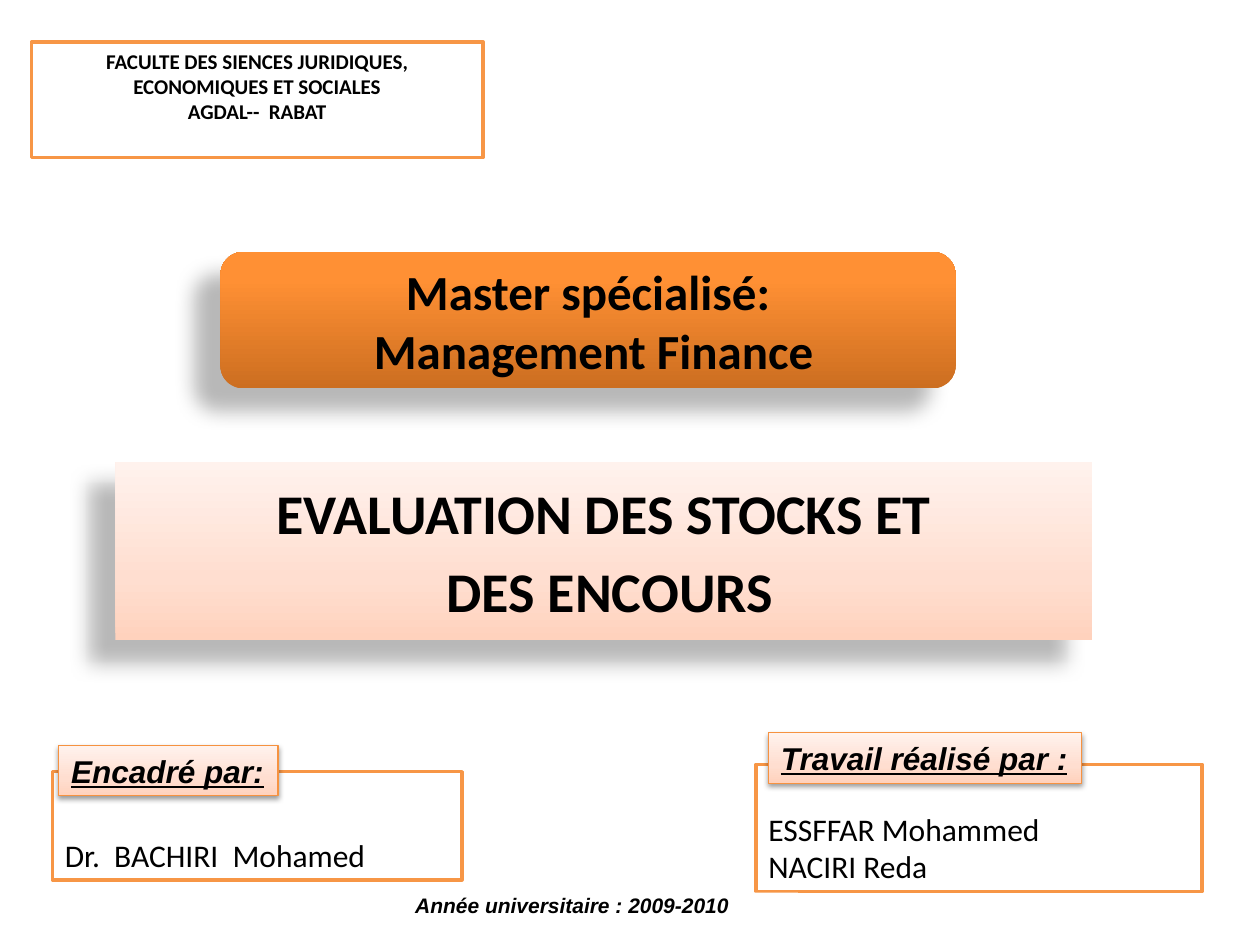
import dataclasses
import typing

import lxml.etree
import pptx
import pptx.dml.color
import pptx.enum.shapes
import pptx.enum.text
import pptx.oxml
import pptx.oxml.ns
import pptx.util

COLS, ROWS = 120, 90
ALIGN = pptx.enum.text.PP_ALIGN
ANCHOR = pptx.enum.text.MSO_ANCHOR
SHAPE = pptx.enum.shapes.MSO_SHAPE

WHITE, BLACK, ORANGE = "FFFFFF", "000000", "F79646"
PEACH = ((0, "FFD2BD"), (35, "FFDED0"), (100, "FFF2ED"))
AMBER = ((0, "CC6E20"), (80, "FF9034"), (100, "FF9136"))


@dataclasses.dataclass
class Shade:
    alpha: int
    blur: float
    dist: float
    angle: int


DEEP = Shade(28, 11.8, 19.7, 141)
SOFT = Shade(38, 3.1, 1.6, 90)


@dataclasses.dataclass
class Box:
    col: float
    row: float
    wide: float
    high: float
    text: str
    size: int
    fill: typing.Any = WHITE
    line: str = ""
    width: float = 2
    shade: typing.Optional[Shade] = None
    font: str = "Calibri"
    bold: bool = True
    slant: bool = False
    under: bool = False
    round: bool = False
    align: typing.Any = ALIGN.CENTER
    anchor: typing.Any = ANCHOR.TOP
    wrap: bool = True
    before: float = 0
    top: float = 0.05


def banner(*place: float, **more: typing.Any) -> Box:
    return Box(*place, round=True, shade=DEEP, anchor=ANCHOR.MIDDLE, **more)


def names(*place: float, text: str) -> Box:
    return Box(*place, text=text, size=18, line=ORANGE, bold=False,
               align=ALIGN.LEFT, anchor=ANCHOR.BOTTOM)


def label(*place: float, text: str) -> Box:
    return Box(*place, text=text, size=18, fill=PEACH, line="F69240", width=0.75,
               shade=SOFT, font="Arial", slant=True, under=True,
               align=ALIGN.LEFT, wrap=False)


TITLE = banner(11, 44, 93, 17, text="EVALUATION DES STOCKS ET\n DES ENCOURS",
               size=32, fill=PEACH, before=6.4)
BOXES = [
    Box(3, 4, 43, 11, "FACULTE DES SIENCES JURIDIQUES, ECONOMIQUES ET SOCIALES\n"
        "AGDAL--  RABAT", 12, line=ORANGE),
    banner(21, 24, 70, 13, text="Master spécialisé:\n Management Finance",
           size=28, fill=AMBER),
    names(5, 73.5, 39, 10.3, text="Dr.  BACHIRI  Mohamed"),
    names(72, 72.8, 42.5, 12.1, text="ESSFFAR Mohammed\nNACIRI Reda"),
    label(73.2, 69.8, 29.8, 4.8, text="Travail réalisé par :"),
    label(5.6, 71, 20.9, 4.8, text="Encadré par:"),
    Box(33, 85, 43, 3, "Année universitaire : 2009-2010", 12,
        font="Arial", slant=True, top=0),
]


def paint(code: str) -> pptx.dml.color.RGBColor:
    return pptx.dml.color.RGBColor.from_string(code)


def node(body: str) -> typing.Any:
    root = f"<a:root {pptx.oxml.ns.nsdecls('a')}>{body}</a:root>"
    return pptx.oxml.parse_xml(root)[0]


def blend(stops: tuple) -> typing.Any:
    marks = "".join(f'<a:gs pos="{at * 1000}"><a:srgbClr val="{code}"/></a:gs>'
                    for at, code in stops)
    return node(f'<a:gradFill rotWithShape="1"><a:gsLst>{marks}</a:gsLst>'
                '<a:lin ang="16200000" scaled="0"/></a:gradFill>')


def cast(shade: Shade) -> typing.Any:
    return node(f'<a:effectLst><a:outerShdw blurRad="{pptx.util.Pt(shade.blur)}" '
                f'dist="{pptx.util.Pt(shade.dist)}" dir="{shade.angle * 60000}" '
                'algn="ctr" rotWithShape="0">'
                f'<a:srgbClr val="{BLACK}"><a:alpha val="{shade.alpha * 1000}"/>'
                '</a:srgbClr></a:outerShdw></a:effectLst>')


def write(frame: typing.Any, box: Box) -> None:
    frame.text = box.text
    frame.word_wrap = box.wrap
    frame.auto_size = pptx.enum.text.MSO_AUTO_SIZE.NONE
    frame.vertical_anchor = box.anchor
    frame.margin_top = pptx.util.Inches(box.top)
    for para in frame.paragraphs:
        para.alignment = box.align
        para.space_before = pptx.util.Pt(box.before)
        for run in para.runs:
            font = run.font
            font.name, font.size = box.font, pptx.util.Pt(box.size)
            font.bold, font.italic, font.underline = box.bold, box.slant, box.under
            font.color.rgb = paint(BLACK)


def style(shape: typing.Any, box: Box, deck: typing.Any) -> None:
    cell_x, cell_y = deck.slide_width / COLS, deck.slide_height / ROWS
    shape.left, shape.width = round(box.col * cell_x), round(box.wide * cell_x)
    shape.top, shape.height = round(box.row * cell_y), round(box.high * cell_y)
    props = shape._element.spPr
    if props.find(pptx.oxml.ns.qn("a:prstGeom")) is None:
        props.append(node('<a:prstGeom prst="roundRect"><a:avLst/></a:prstGeom>'))
    if isinstance(box.fill, str):
        shape.fill.solid()
        shape.fill.fore_color.rgb = paint(box.fill)
    else:
        props.append(blend(box.fill))
    if box.line:
        shape.line.color.rgb = paint(box.line)
        shape.line.width = pptx.util.Pt(box.width)
    else:
        shape.line.fill.background()
    if box.shade:
        props.append(cast(box.shade))
    else:
        shape.shadow.inherit = False
    write(shape.text_frame, box)


def main() -> None:
    deck = pptx.Presentation()
    deck.slide_width, deck.slide_height = pptx.util.Inches(10), pptx.util.Inches(7.5)
    slide = deck.slides.add_slide(deck.slide_layouts[5])
    style(slide.shapes.title, TITLE, deck)
    for box in BOXES:
        kind = SHAPE.ROUNDED_RECTANGLE if box.round else SHAPE.RECTANGLE
        style(slide.shapes.add_shape(kind, 0, 0, 0, 0), box, deck)
    deck.save("out.pptx")


if __name__ == "__main__":
    main()
